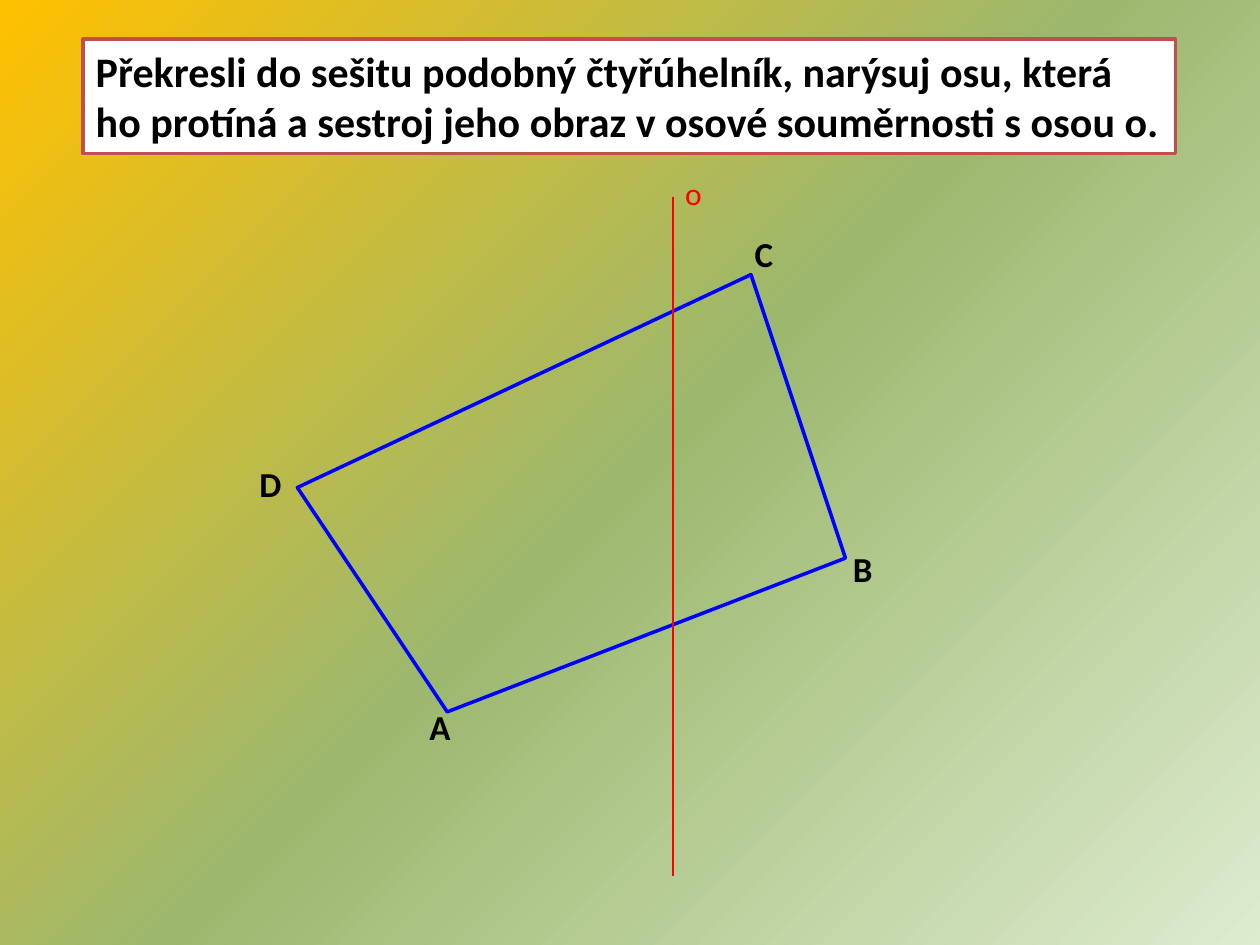
from copy import deepcopy

from lxml.etree import SubElement
from pptx import Presentation
from pptx.dml.color import RGBColor
from pptx.enum.shapes import MSO_CONNECTOR
from pptx.enum.text import MSO_ANCHOR, MSO_AUTO_SIZE, PP_ALIGN
from pptx.oxml.ns import qn
from pptx.util import Inches, Pt

COLORS = {
    "pale": "DDEBCF",
    "green": "9CB86E",
    "gold": "FFC000",
    "side": "0000FF",
    "axis": "FF0000",
    "frame": "C0504D",
    "paper": "FFFFFF",
    "ink": "000000",
}
TASK = (
    "Překresli do sešitu podobný čtyřúhelník, narýsuj osu, která ho protíná "
    "a sestroj jeho obraz v osové souměrnosti s osou o."
)
VERTICES = [(3.55, 5.65), (6.71, 4.43), (5.96, 2.18), (2.36, 3.87)]
VERTEX_LABELS = [
    ("A", (3.31, 5.55, 0.37, 0.44)),
    ("B", (6.67, 4.3, 0.36, 0.44)),
    ("C", (5.89, 1.8, 0.35, 0.44)),
    ("D", (1.96, 3.62, 0.38, 0.44)),
]
TASK_FORMAT = {"size": Pt(24), "bold": True}
VERTEX_FORMAT = {"size": Pt(20), "bold": True}
AXIS_FORMAT = {"size": Pt(18), "bold": False}


def color(name):
    return RGBColor.from_string(COLORS[name])


def paint_background(slide):
    fill = slide.background.fill
    fill.gradient()
    fill.gradient_angle = 135
    stop_list = slide.element.find(".//" + qn("a:gsLst"))
    stop_list.insert(1, deepcopy(stop_list[0]))
    for stop, name, position in zip(
        fill.gradient_stops, ("pale", "green", "gold"), (0, 0.5, 1)
    ):
        stop.color.rgb = color(name)
        stop.position = position


def style_line(line, name, width):
    line.color.rgb = color(name)
    line.width = Pt(width)


def write_text(frame, text, font_format, color_name="ink"):
    para = frame.paragraphs[0]
    para.alignment = PP_ALIGN.LEFT
    span = para.add_run()
    span.text = text
    span.font.name = "Calibri"
    span.font.color.rgb = color(color_name)
    for key, value in font_format.items():
        setattr(span.font, key, value)


def add_task(slide):
    title = slide.shapes.title
    for key, value in zip(("left", "top", "width", "height"), (0.66, 0.31, 8.67, 0.91)):
        setattr(title, key, Inches(value))
    title.fill.solid()
    title.fill.fore_color.rgb = color("paper")
    style_line(title.line, "frame", 2)
    frame = title.text_frame
    frame.word_wrap = True
    frame.auto_size = MSO_AUTO_SIZE.SHAPE_TO_FIT_TEXT
    frame.vertical_anchor = MSO_ANCHOR.TOP
    write_text(frame, TASK, TASK_FORMAT)


def add_quadrilateral(slide):
    points = [(Inches(x), Inches(y)) for x, y in VERTICES]
    builder = slide.shapes.build_freeform(*points[0])
    builder.add_line_segments(points[1:], close=True)
    outline = builder.convert_to_shape()
    outline.shadow.inherit = False
    outline.fill.background()
    style_line(outline.line, "side", 2)


def add_axis(slide):
    axis = slide.shapes.add_connector(
        MSO_CONNECTOR.STRAIGHT, Inches(5.34), Inches(1.56), Inches(5.34), Inches(6.95)
    )
    style_line(axis.line, "axis", 1.25)
    SubElement(axis.element.spPr, qn("a:effectLst"))


def add_label(slide, text, place, font_format, color_name="ink", wrap=False):
    box = slide.shapes.add_textbox(*map(Inches, place))
    frame = box.text_frame
    frame.word_wrap = wrap
    frame.auto_size = MSO_AUTO_SIZE.SHAPE_TO_FIT_TEXT
    write_text(frame, text, font_format, color_name)


def main():
    deck = Presentation()
    deck.slide_width, deck.slide_height = Inches(10), Inches(7.5)
    page = deck.slides.add_slide(deck.slide_layouts.get_by_name("Title Only"))
    paint_background(page)
    add_task(page)
    add_quadrilateral(page)
    add_axis(page)
    add_label(page, "o", (5.34, 1.33, 0.34, 0.4), AXIS_FORMAT, "axis", wrap=True)
    for text, place in VERTEX_LABELS:
        add_label(page, text, place, VERTEX_FORMAT)
    deck.save("out.pptx")


if __name__ == "__main__":
    main()
